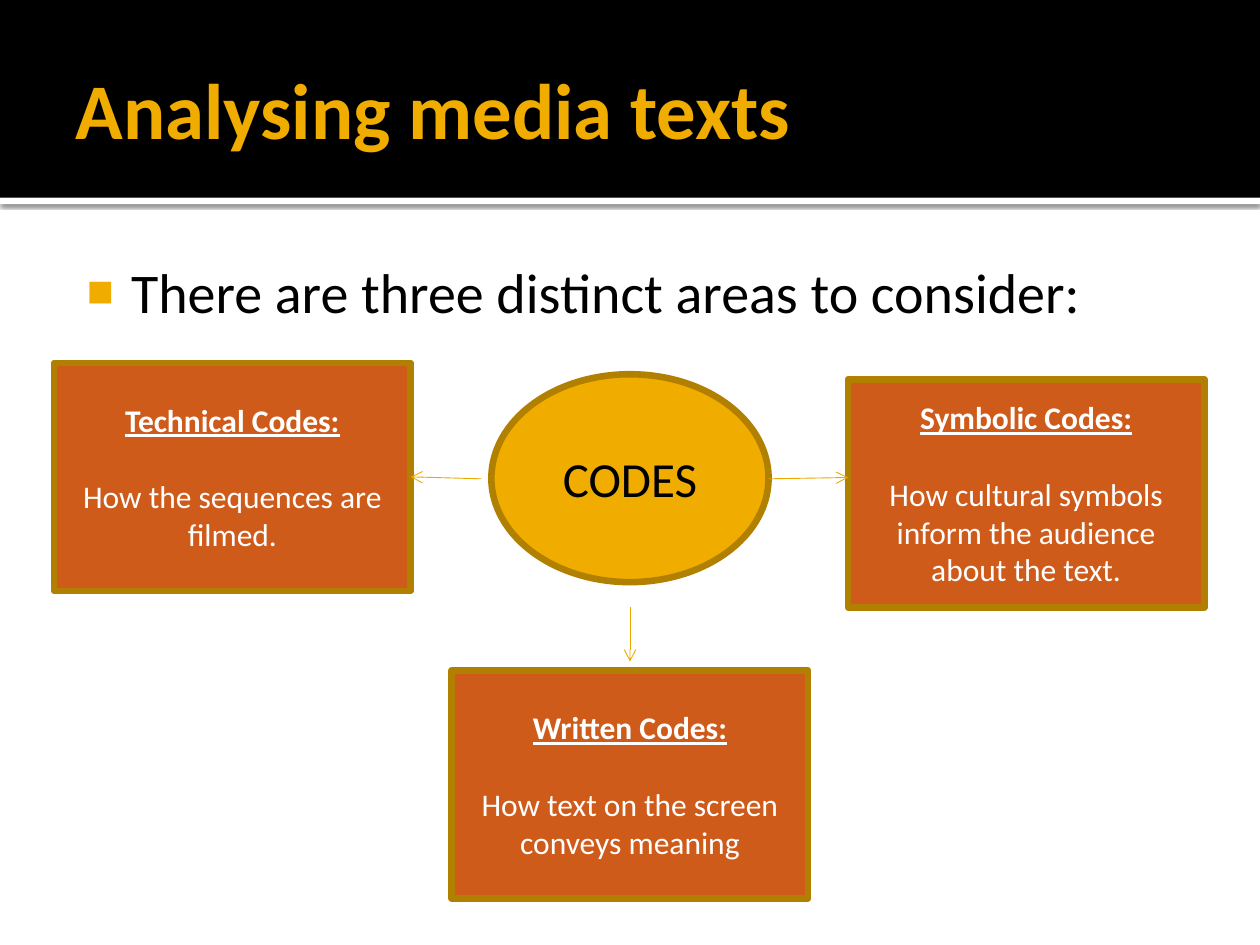
from dataclasses import dataclass
from typing import Optional

from lxml.etree import SubElement
from pptx import Presentation
from pptx.dml.color import RGBColor
from pptx.enum.shapes import MSO_CONNECTOR as Connector, MSO_SHAPE as Preset
from pptx.enum.text import MSO_ANCHOR as Anchor, MSO_AUTO_SIZE as AutoSize, PP_ALIGN as Align
from pptx.oxml.ns import qn
from pptx.util import Emu, Inches, Pt

COLORS = {
    "black": "000000",
    "white": "FFFFFF",
    "gold": "F0AD00",
    "dark_gold": "B28000",
    "arrow": "EBA900",
    "orange": "CF5B1B",
}
FONT = "Calibri"
CELL = Inches(0.1)
COLUMNS, ROWS = 100, 75
BOX_WIDTH, BOX_HEIGHT = 28.3, 18.1


@dataclass(frozen=True)
class Area:
    column: float
    row: float
    columns: float
    rows: float

    def lengths(self) -> list[Emu]:
        return [cells(n) for n in (self.column, self.row, self.columns, self.rows)]


@dataclass(frozen=True)
class CodeBox:
    column: float
    row: float
    heading: str
    text: str


@dataclass(frozen=True)
class Arrow:
    start: tuple[float, float]
    end: tuple[float, float]
    target: Optional[str] = None
    side: int = 0


BOXES = [
    CodeBox(4.3, 28.8, "Technical Codes:", "How the sequences are filmed."),
    CodeBox(67.3, 30.1, "Symbolic Codes:",
            "How cultural symbols inform the audience about the text."),
    CodeBox((COLUMNS - BOX_WIDTH) / 2, 53.2, "Written Codes:",
            "How text on the screen conveys meaning"),
]
ARROWS = [
    Arrow((38.2, 38), (32.6, 37.9), "Technical Codes:", 3),
    Arrow((50, 48.2), (50, 52.5)),
    Arrow((61, 38), (67.3, 37.9)),
]


def cells(count: float) -> Emu:
    return Emu(round(CELL * count))


def rgb(name: str) -> RGBColor:
    return RGBColor.from_string(COLORS[name])


def style(paragraph, size: float, color: str, bold: bool = False) -> None:
    paragraph.font.name = FONT
    paragraph.font.size = Pt(size)
    paragraph.font.bold = bold
    paragraph.font.color.rgb = rgb(color)


def add_filled(slide, preset, area: Area, fill: str, line: Optional[str] = None):
    shape = slide.shapes.add_shape(preset, *area.lengths())
    shape.shadow.inherit = False
    shape.fill.solid()
    shape.fill.fore_color.rgb = rgb(fill)
    if line:
        shape.line.color.rgb = rgb(line)
        shape.line.width = Pt(3.78)
    else:
        shape.line.fill.background()
    return shape


def add_header(slide) -> None:
    band = add_filled(slide, Preset.RECTANGLE, Area(0, 0, COLUMNS, 15.7), "black")
    stripe = add_filled(slide, Preset.RECTANGLE, Area(0, 15.7, COLUMNS, 0.5), "white")
    effects = stripe._element.spPr.find(qn("a:effectLst"))
    shadow = SubElement(effects, qn("a:outerShdw"), blurRad=str(Pt(2.5)),
                        dist=str(Pt(0.8)), dir="5400000", algn="tl", rotWithShape="0")
    color = SubElement(shadow, qn("a:srgbClr"), val=COLORS["black"])
    SubElement(color, qn("a:alpha"), val="60000")
    for shape in (band, stripe):
        slide.shapes._spTree.insert(2, shape._element)


def fill_placeholder(shape, area: Area, text: str, margins: tuple, anchor):
    shape.left, shape.top, shape.width, shape.height = area.lengths()
    frame = shape.text_frame
    frame.text = text
    frame.word_wrap = True
    frame.auto_size = AutoSize.NONE
    frame.vertical_anchor = anchor
    (frame.margin_left, frame.margin_top,
     frame.margin_right, frame.margin_bottom) = map(Inches, margins)
    paragraph = frame.paragraphs[0]
    paragraph.alignment = Align.LEFT
    paragraph.space_before = Pt(0)
    return paragraph


def add_bullet(paragraph) -> None:
    properties = paragraph._p.get_or_add_pPr()
    properties.set("marL", str(Inches(0.48)))
    properties.set("indent", str(Inches(-0.35)))
    color = SubElement(properties, qn("a:buClr"))
    SubElement(color, qn("a:srgbClr"), val=COLORS["gold"])
    SubElement(properties, qn("a:buSzPct"), val="80000")
    SubElement(properties, qn("a:buFont"), typeface="Arial")
    SubElement(properties, qn("a:buChar"), char="■")


def add_code_box(slide, box: CodeBox):
    area = Area(box.column, box.row, BOX_WIDTH, BOX_HEIGHT)
    shape = add_filled(slide, Preset.RECTANGLE, area, "orange", "dark_gold")
    frame = shape.text_frame
    frame.vertical_anchor = Anchor.MIDDLE
    frame.text = f"{box.heading}\n{box.text}"
    heading, description = frame.paragraphs
    style(heading, 18, "white", bold=True)
    heading.font.underline = True
    style(description, 18, "white")
    description.space_before = Pt(22)
    for paragraph in frame.paragraphs:
        paragraph.alignment = Align.CENTER
    return shape


def add_arrow(slide, arrow: Arrow, boxes: dict) -> None:
    points = [cells(n) for n in arrow.start + arrow.end]
    connector = slide.shapes.add_connector(Connector.STRAIGHT, *points)
    if arrow.target:
        connector.end_connect(boxes[arrow.target], arrow.side)
    connector.line.color.rgb = rgb("arrow")
    connector.line.width = Pt(0.5)
    SubElement(connector.line._get_or_add_ln(), qn("a:tailEnd"), type="arrow")
    SubElement(connector._element.spPr, qn("a:effectLst"))


def main() -> None:
    presentation = Presentation()
    presentation.slide_width = cells(COLUMNS)
    presentation.slide_height = cells(ROWS)
    slide = presentation.slides.add_slide(presentation.slide_layouts[1])
    add_header(slide)

    title = fill_placeholder(slide.shapes.title, Area(5, 1.7, 90, 13.7),
                             "Analysing media texts", (0.1, 0.05, 0.05, 0.05), Anchor.MIDDLE)
    style(title, 45, "gold", bold=True)
    body = fill_placeholder(slide.placeholders[1], Area(5, 19.4, 90, 50.6),
                            "There are three distinct areas to consider:",
                            (0.06, 0.1, 0.1, 0.05), Anchor.TOP)
    style(body, 32, "black")
    add_bullet(body)

    hub = add_filled(slide, Preset.OVAL, Area(39, 29.7, 22, 16.5), "gold", "dark_gold")
    hub.text_frame.text = "CODES"
    hub.text_frame.vertical_anchor = Anchor.MIDDLE
    label = hub.text_frame.paragraphs[0]
    label.alignment = Align.CENTER
    style(label, 28, "black")

    boxes = {box.heading: add_code_box(slide, box) for box in BOXES}
    for arrow in ARROWS:
        add_arrow(slide, arrow, boxes)
    presentation.save("out.pptx")


if __name__ == "__main__":
    main()
